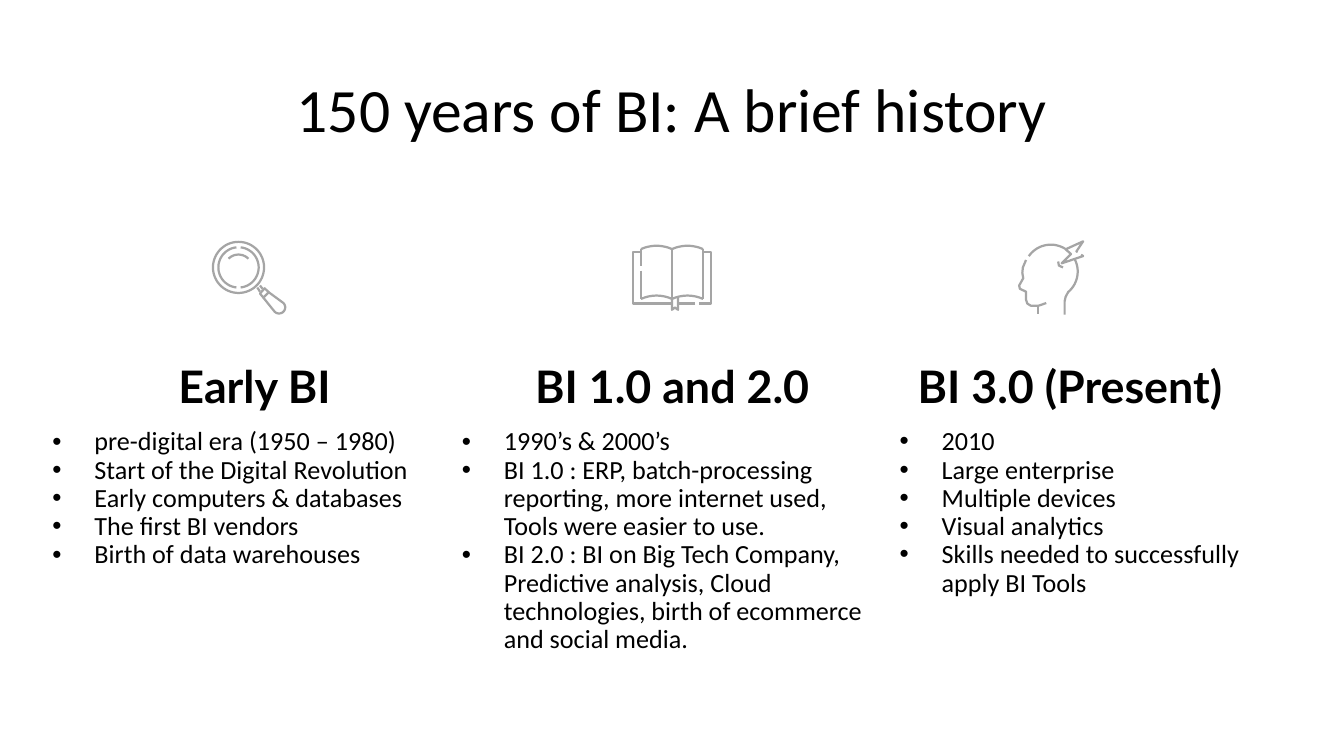
import math
from dataclasses import dataclass

from pptx import Presentation
from pptx import util as u
from pptx.dml.color import RGBColor
from pptx.enum import text
from pptx.oxml import parse_xml
from pptx.oxml.ns import nsdecls

COMPARISON_LAYOUT = 4
HEADING_TOP, HEADING_HEIGHT = 176.7, 51.8
LIST_TOP = 222.3


@dataclass(frozen=True)
class Theme:
    ink: RGBColor = RGBColor(0x00, 0x00, 0x00)
    icon: RGBColor = RGBColor(0xA5, 0xA5, 0xA5)
    body_font: str = "Calibri"
    heading_font: str = "Lato"
    bullet_font: str = "Arial"
    title_size: float = 33
    heading_size: float = 24
    body_size: float = 14
    icon_line: float = 1.2
    inset: float = 7.2
    indent: float = 22.5
    line_spacing: float = 0.9


def arc(cx, cy, radius, start, end, steps=24):
    """Points along a circle; degrees run clockwise from the right."""
    angles = (math.radians(start + (end - start) * i / steps) for i in range(steps + 1))
    return [(cx + radius * math.cos(a), cy + radius * math.sin(a)) for a in angles]


def magnifier():
    cx, cy = 15.5, 14.4
    glint = [arc(cx, cy + 0.6, 7.5, 225, 315)]
    glass_and_handle = [
        arc(cx, cy, 13.7, 0, 360, 60),
        [(25.6, 25.2), (27, 27.4)],
        [(27, 24.1), (28.4, 25.9)],
        [(27, 28.4), (29.5, 25.6), (31.7, 27.7), (28.8, 30.6), (27, 28.4)],
        [(28.8, 30.6), *arc(37.2, 35.8, 3.3, 140, -45), (31.7, 27.7)],
    ]
    right_rim = [arc(cx, cy, 10.8, -84, 84)]
    left_rim = [arc(cx, cy, 10.8, 96, 264)]
    return [glint, glass_and_handle, right_rim, left_rim]


def book():
    left, spine, right, top, bottom = 5, 21.6, 38.2, 2.5, 29.2
    page_edges = [
        arc((a + b) / 2, y, 20, 245.5, 294.5)
        for a, b in ((left, spine), (spine, right))
        for y in (20.7, 47.4)
    ]
    return [page_edges + [
        [(left, top), (left, 11.8)],
        [(left, 14), (left, bottom)],
        [(spine, top), (spine, bottom)],
        [(right, top), (right, bottom)],
        [(left, 4), (0.7, 4), (0.7, 31.7), (spine, 31.7)],
        [(right, 4), (42.5, 4), (42.5, 31.7), (36, 31.7)],
        [(34, 31.7), (24.8, 31.7)],
        [(spine, bottom), (spine, 35), (23.2, 33.8), (24.8, 35), (24.8, 28.5)],
    ]]


def head_with_bolt():
    face = [
        [(4.7, 10.4), (3, 14.4), (2.7, 17.3), (3.2, 20.2), (1, 24.1), (1.4, 25.9),
         (4.7, 27.4), (4.7, 31.7), (5.4, 33.8), (7.2, 34.9), (11.5, 34.9), (15.5, 33.5)],
        [(11.2, 34.9), (11.2, 39.6)],
    ]
    skull_and_bolt = [
        arc(18, 16.6, 14.4, 215, 302),
        [*arc(18, 16.6, 14.4, -27, 50), (25.9, 30.2), (25.4, 32.5), (25.4, 39.6)],
        [(34.2, 7.6), (35.3, 8.3), (23.8, 12.2), (28.8, 7.2), (25.9, 4.7),
         (35.3, 0.4), (31.7, 5.8), (32.4, 6.1)],
    ]
    spark = [[(21.9, 11.2), (22.3, 13.4), (24.5, 14.4)]]
    return [face, skull_and_bolt, spark]


def write(para, words, *, font, size, color, bold=False, align=text.PP_ALIGN.LEFT, spacing=1.0):
    para.alignment = align
    para.line_spacing = spacing
    para.space_before = para.space_after = u.Pt(0)
    span = para.add_run()
    span.text = words
    span.font.name = font
    span.font.size = u.Pt(size)
    span.font.bold = bold
    span.font.color.rgb = color


class SlideWriter:
    def __init__(self, page, theme):
        self.page = page
        self.theme = theme
        self.bodies = iter([
            holder for holder in page.placeholders if holder.placeholder_format.idx in (1, 2, 3, 4)
        ])

    def frame(self, box, place, anchor=text.MSO_ANCHOR.TOP):
        """Place a box and return its text frame, ready for text."""
        box.left, box.top, box.width, box.height = map(u.Pt, place)
        frame = box.text_frame
        frame.word_wrap = True
        frame.auto_size = text.MSO_AUTO_SIZE.NONE
        frame.vertical_anchor = anchor
        inset = u.Pt(self.theme.inset)
        frame.margin_left = frame.margin_right = inset
        frame.margin_top = frame.margin_bottom = inset
        return frame

    def body(self):
        """Next free body placeholder, or a text box once all are used."""
        return next(self.bodies, None) or self.page.shapes.add_textbox(0, 0, 0, 0)

    def title(self, words, place):
        look = self.theme
        frame = self.frame(self.page.shapes.title, place)
        write(frame.paragraphs[0], words, font=look.body_font, size=look.title_size,
              color=look.ink, align=text.PP_ALIGN.CENTER, spacing=look.line_spacing)

    def heading(self, words, place):
        look = self.theme
        frame = self.frame(self.body(), place, text.MSO_ANCHOR.BOTTOM)
        write(frame.paragraphs[0], words, font=look.heading_font, size=look.heading_size,
              color=look.ink, bold=True, align=text.PP_ALIGN.CENTER, spacing=look.line_spacing)

    def bullets(self, items, place):
        look = self.theme
        frame = self.frame(self.body(), place)
        for number, item in enumerate(items):
            para = frame.add_paragraph() if number else frame.paragraphs[0]
            write(para, item, font=look.body_font, size=look.body_size,
                  color=look.ink, spacing=look.line_spacing)
            props = para._p.get_or_add_pPr()
            props.set("marL", str(u.Pt(look.indent)))
            props.set("indent", str(-u.Pt(look.indent)))
            props.append(parse_xml(f'<a:buFont {nsdecls("a")} typeface="{look.bullet_font}"/>'))
            props.append(parse_xml(f'<a:buChar {nsdecls("a")} char="•"/>'))

    def icon(self, parts, left, top):
        """Draw each part as one outline of open strokes, grouping several parts."""
        shapes = self.page.shapes
        if len(parts) > 1:
            shapes = shapes.add_group_shape().shapes
        for strokes in parts:
            self.outline(shapes, strokes, left, top)

    def outline(self, shapes, strokes, left, top):
        builder = None
        for stroke in strokes:
            start, *rest = [(u.Pt(x), u.Pt(y)) for x, y in stroke]
            if builder is None:
                builder = shapes.build_freeform(*start, scale=1.0)
            else:
                builder.move_to(*start)
            builder.add_line_segments(rest, close=False)
        shape = builder.convert_to_shape(u.Pt(left), u.Pt(top))
        shape.shadow.inherit = False
        shape.fill.background()
        shape.line.color.rgb = self.theme.icon
        shape.line.width = u.Pt(self.theme.icon_line)


# heading, heading (left, width), list (left, width, height), icon parts, icon (left, top), items
ERAS = [
    ("Early BI", (48.2, 176.4), (20.9, 224.6, 107.3), magnifier, (112.3, 128.9),
     ["pre-digital era (1950 – 1980)", "Start of the Digital Revolution",
      "Early computers & databases", "The first BI vendors", "Birth of data warehouses"]),
    ("BI 1.0 and 2.0", (271.9, 176.4), (240.2, 234.7, 80), book, (338.4, 131),
     ["1990’s & 2000’s",
      "BI 1.0 : ERP, batch-processing reporting, more internet used, Tools were easier to use.",
      "BI 2.0 : BI on Big Tech Company, Predictive analysis, Cloud technologies, "
      "birth of ecommerce and social media."]),
    ("BI 3.0 (Present)", (474.9, 196.6), (474.9, 203, 80), head_with_bolt, (545, 128.9),
     ["2010", "Large enterprise", "Multiple devices", "Visual analytics",
      "Skills needed to successfully apply BI Tools"]),
]


def main():
    deck = Presentation()
    deck.slide_width, deck.slide_height = u.Pt(720), u.Pt(405)
    page = deck.slides.add_slide(deck.slide_layouts[COMPARISON_LAYOUT])
    writer = SlideWriter(page, Theme())
    writer.title("150 years of BI: A brief history", (56.5, 35.3, 607, 45.4))
    for name, (head_left, head_width), (left, width, height), parts, corner, items in ERAS:
        writer.heading(name, (head_left, HEADING_TOP, head_width, HEADING_HEIGHT))
        writer.bullets(items, (left, LIST_TOP, width, height))
        writer.icon(parts(), *corner)
    deck.save("out.pptx")


if __name__ == "__main__":
    main()
